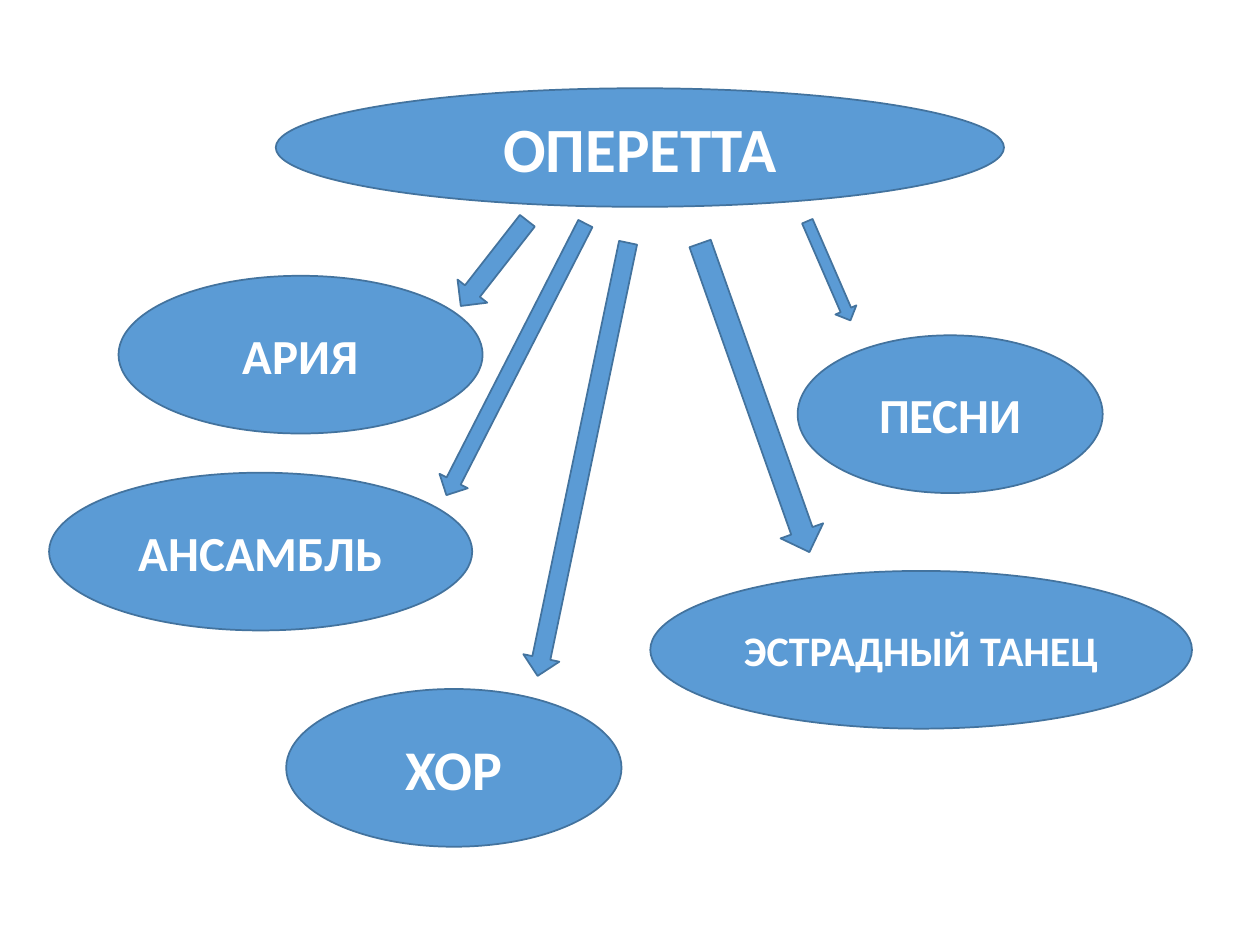
from pptx import Presentation
from pptx import util as u
from pptx.dml.color import RGBColor
from pptx.enum import shapes, text

FONT = "Calibri"
FILL, OUTLINE, LETTERS = "5B9BD5", "43739E", "FFFFFF"
GENRE_HEIGHT = 3.18

# label, left, top, width, text size (cm and points, within the diagram)
GENRES = [
    ("АРИЯ", 1.4, 3.78, 7.34, 28),
    ("АНСАМБЛЬ", 0, 7.75, 8.53, 28),
    ("ХОР", 4.78, 12.11, 6.76, 32),
    ("ЭСТРАДНЫЙ ТАНЕЦ", 12.12, 9.73, 10.92, 24),
    ("ПЕСНИ", 15.09, 4.98, 6.15, 28),
]

# left, top, width, length, rotation: one arrow for each genre, in order
ARROWS = [
    (8.59, 2.44, 0.76, 2.18, 38),
    (9.09, 2.39, 0.64, 6.15, 27.1),
    (10.39, 3.02, 0.74, 8.92, 11.8),
    (13.77, 2.94, 0.91, 6.6, 340.5),
    (15.49, 2.59, 0.46, 2.18, 336.5),
]


def paint(color_format, hex_color):
    color_format.rgb = RGBColor.from_string(hex_color)


def add_figure(slide, preset, left, top, width, height):
    figure = slide.shapes.add_shape(
        preset, u.Cm(left), u.Cm(top), u.Cm(width), u.Cm(height))
    figure.shadow.inherit = False
    figure.fill.solid()
    paint(figure.fill.fore_color, FILL)
    paint(figure.line.color, OUTLINE)
    figure.line.width = u.Pt(1)
    return figure


def add_oval(slide, label, left, top, width, height, size):
    oval = add_figure(slide, shapes.MSO_SHAPE.OVAL, left, top, width, height)
    frame = oval.text_frame
    frame.word_wrap = True
    frame.vertical_anchor = text.MSO_ANCHOR.MIDDLE
    paragraph = frame.paragraphs[0]
    paragraph.alignment = text.PP_ALIGN.CENTER
    run = paragraph.add_run()
    run.text = label
    run.font.name = FONT
    run.font.size = u.Pt(size)
    run.font.bold = True
    paint(run.font.color, LETTERS)


def add_operetta_diagram(slide, left, top):
    # Heading oval
    add_oval(slide, "ОПЕРЕТТА", left + 4.57, top, 14.68, 2.39, 36)

    # Genres that make up an operetta
    for label, x, y, width, size in GENRES:
        add_oval(slide, label, left + x, top + y, width, GENRE_HEIGHT, size)

    # Arrows from the heading to the genres
    for x, y, width, length, rotation in ARROWS:
        arrow = add_figure(slide, shapes.MSO_SHAPE.DOWN_ARROW,
                           left + x, top + y, width, length)
        arrow.rotation = rotation


def main():
    deck = Presentation()
    deck.slide_width, deck.slide_height = u.Cm(25.4), u.Cm(19.05)
    blank_layout = deck.slide_layouts[6]
    slide = deck.slides.add_slide(blank_layout)
    add_operetta_diagram(slide, left=0.99, top=1.78)
    deck.save("out.pptx")


if __name__ == "__main__":
    main()
